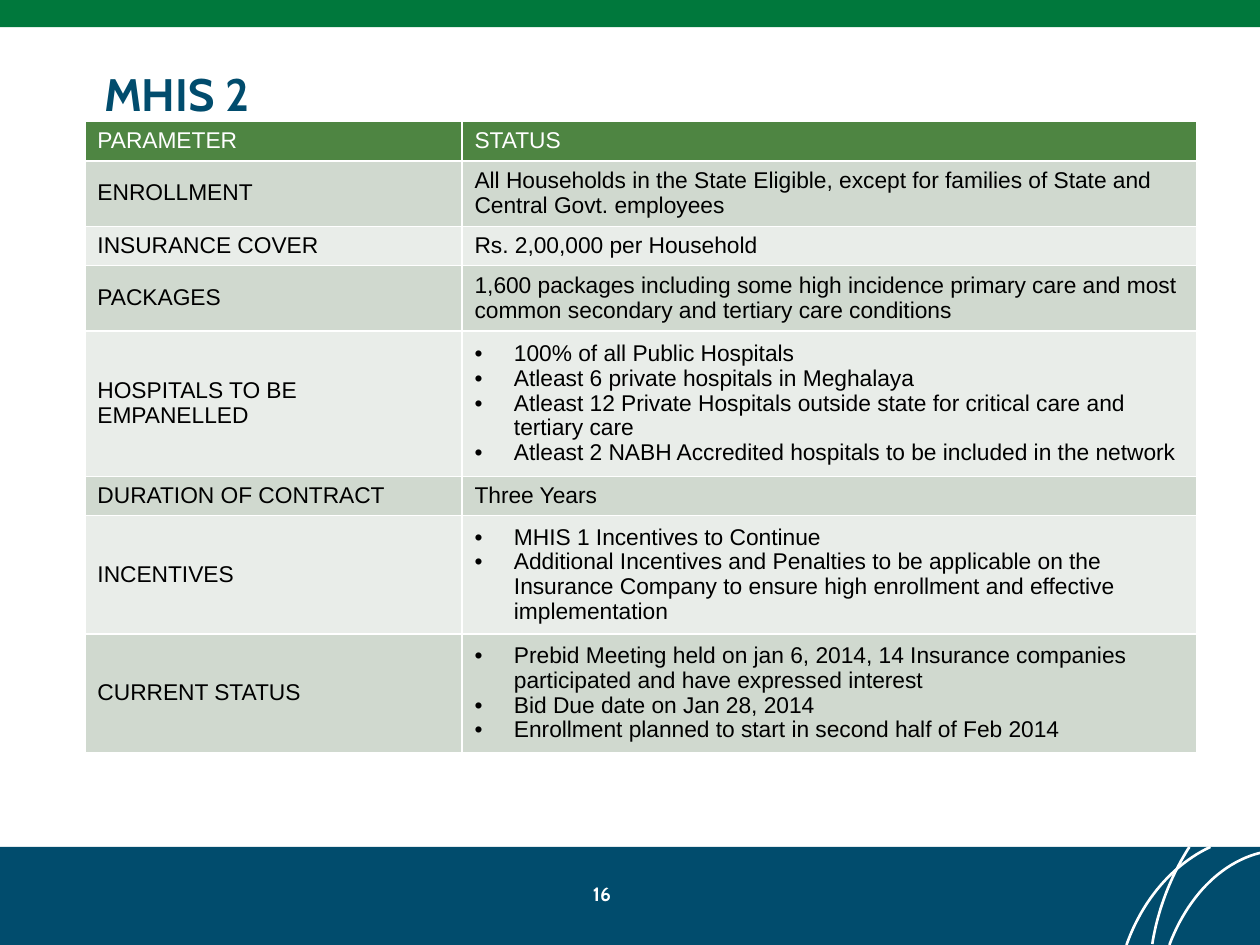
from lxml import etree
from pptx import Presentation
from pptx.dml.color import RGBColor
from pptx.enum.shapes import MSO_SHAPE as Shape
from pptx.enum.text import MSO_ANCHOR as Anchor, PP_ALIGN as Align
from pptx.oxml import parse_xml
from pptx.oxml.ns import nsdecls, qn
from pptx.util import Pt

BLUE = RGBColor(0x01, 0x4C, 0x6D)
GREEN = RGBColor(0x00, 0x78, 0x3C)
HEADER_GREEN = RGBColor(0x4E, 0x85, 0x42)
BAND_DARK = RGBColor(0xD0, 0xD9, 0xCF)
BAND_LIGHT = RGBColor(0xE9, 0xED, 0xE9)
WHITE = RGBColor(0xFF, 0xFF, 0xFF)
BLACK = RGBColor(0x00, 0x00, 0x00)

presentation = Presentation()
presentation.slide_width, presentation.slide_height = Pt(720), Pt(540)
slide = presentation.slides.add_slide(presentation.slide_layouts[6])


def write(paragraph, text, size=13, font="Arial", color=BLACK, bold=False,
          align=Align.LEFT, spacing=None, bullet=False):
    paragraph.alignment = align
    paragraph.line_spacing = spacing
    run = paragraph.add_run()
    run.text = text
    run.font.size, run.font.name, run.font.bold = Pt(size), font, bold
    run.font.color.rgb = color
    if bullet:
        properties = paragraph._p.get_or_add_pPr()
        properties.set("marL", str(Pt(22.5)))
        properties.set("indent", str(-Pt(22.5)))
        etree.SubElement(properties, qn("a:buFont")).set("typeface", "Arial")
        etree.SubElement(properties, qn("a:buChar")).set("char", "•")


# Footer and top bands
for top, height, color in [(484, 56, BLUE), (0, 15.5, GREEN)]:
    band = slide.shapes.add_shape(Shape.RECTANGLE, 0, Pt(top), Pt(720), Pt(height))
    band.shadow.inherit = False
    band.fill.solid()
    band.fill.fore_color.rgb = color
    band.line.fill.background()

# White arcs in the footer: Bezier curves, in points, drawn as short segments
arcs = [
    [(691.7, 484), (670.3, 494), (653, 514), (643.7, 540)],
    [(720, 487.4), (697, 493.2), (678.2, 513.4), (668.2, 540)],
    [(679.7, 484), (669.6, 499.7), (661.7, 519.1), (658.5, 539.5)],
]
STEPS = 24
for arc in arcs:
    points = []
    for step in range(STEPS + 1):
        t = step / STEPS
        weights = [(1 - t) ** 3, 3 * t * (1 - t) ** 2, 3 * t * t * (1 - t), t ** 3]
        points.append(tuple(100 * sum(w * point[axis] for w, point in zip(weights, arc))
                            for axis in (0, 1)))
    builder = slide.shapes.build_freeform(*points[0], scale=Pt(1) / 100)
    builder.add_line_segments(points[1:], close=False)
    curve = builder.convert_to_shape()
    curve.shadow.inherit = False
    curve.fill.background()
    curve.line.color.rgb = WHITE
    curve.line.width = Pt(1.5)

# Title and page number
for text, box, size, color, align in [
    ("MHIS 2", (52.5, 31, 612, 44.6), 26, BLUE, Align.LEFT),
    ("16", (270, 499.5, 148, 22.5), 11, WHITE, Align.CENTER),
]:
    text_box = slide.shapes.add_textbox(*[Pt(length) for length in box])
    frame = text_box.text_frame
    frame.word_wrap = True
    frame.vertical_anchor = Anchor.MIDDLE
    write(frame.paragraphs[0], text, size=size, font="Cabin", color=color,
          bold=True, align=align)

# Table content: parameter, status paragraphs, lines of text in the row
rows = [
    ("PARAMETER", ["STATUS"], 1),
    ("ENROLLMENT", ["All Households in the State Eligible, except for families of "
                    "State and Central Govt. employees"], 2),
    ("INSURANCE COVER", ["Rs. 2,00,000 per Household"], 1),
    ("PACKAGES", ["1,600 packages including some high incidence primary care and most "
                  "common secondary and tertiary care conditions"], 2),
    ("HOSPITALS TO BE EMPANELLED", [
        "100% of all Public Hospitals",
        "Atleast 6 private hospitals in Meghalaya",
        "Atleast 12 Private Hospitals outside state for critical care and tertiary care",
        "Atleast 2 NABH Accredited hospitals to be included in the network"], 5),
    ("DURATION OF CONTRACT", ["Three Years"], 1),
    ("INCENTIVES", [
        "MHIS 1 Incentives to Continue",
        "Additional Incentives and Penalties to be applicable on the Insurance Company "
        "to ensure high enrollment and effective implementation"], 4),
    ("CURRENT STATUS", [
        "Prebid Meeting held on jan 6, 2014, 14 Insurance companies participated "
        "and have expressed interest",
        "Bid Due date on Jan 28, 2014",
        "Enrollment planned to start in second half of Feb 2014"], 4),
]
heights = [7.2 + 14.5 * lines for _, _, lines in rows]
table = slide.shapes.add_table(len(rows), 2, Pt(48.5), Pt(69.5),
                               Pt(635.5), Pt(sum(heights))).table
table.columns[0].width, table.columns[1].width = Pt(215.5), Pt(420)

# Fill the table, with banded rows and white borders
for index, (parameter, status, _) in enumerate(rows):
    table.rows[index].height = Pt(heights[index])
    fill = HEADER_GREEN if index == 0 else BAND_DARK if index % 2 else BAND_LIGHT
    for column, texts in enumerate([[parameter], status]):
        cell = table.cell(index, column)
        cell.vertical_anchor = Anchor.MIDDLE
        frame = cell.text_frame
        for number, text in enumerate(texts):
            paragraph = frame.add_paragraph() if number else frame.paragraphs[0]
            write(paragraph, text, color=BLACK if index else WHITE,
                  spacing=0.97, bullet=len(texts) > 1)
        properties = cell._tc.get_or_add_tcPr()
        for side in ("lnL", "lnR", "lnT", "lnB"):
            properties.append(parse_xml(
                f'<a:{side} {nsdecls("a")} w="{Pt(1)}"><a:solidFill>'
                f'<a:srgbClr val="{WHITE}"/></a:solidFill></a:{side}>'))
        cell.fill.solid()
        cell.fill.fore_color.rgb = fill

presentation.save("out.pptx")
